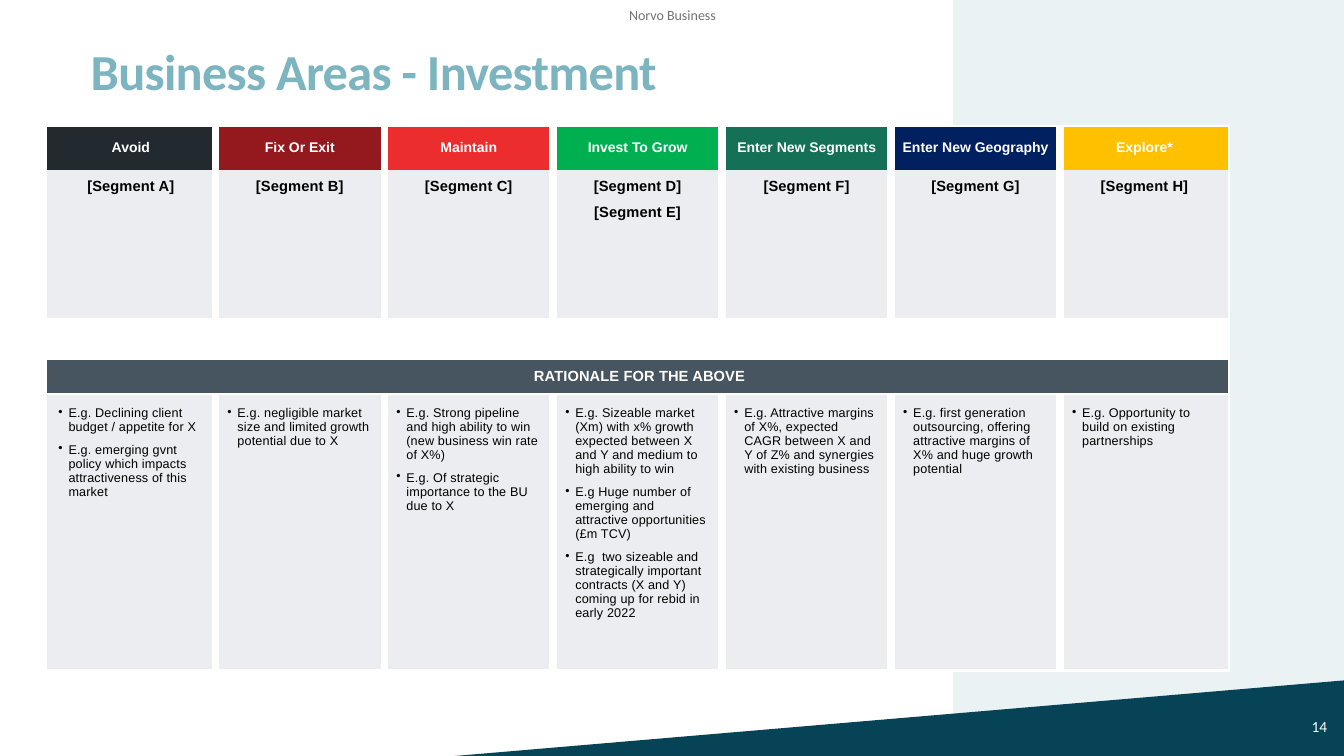
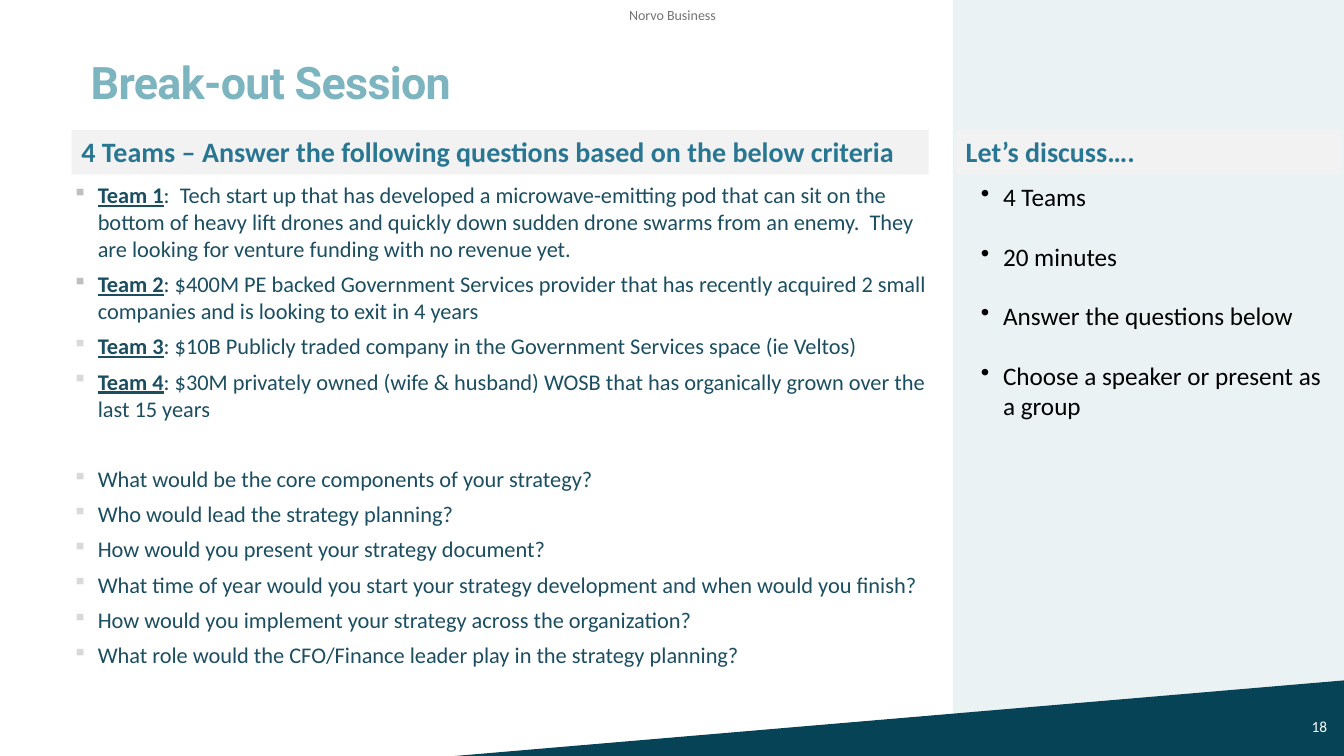
from lxml.etree import SubElement
from pptx import Presentation
from pptx.dml.color import RGBColor
from pptx.enum.shapes import MSO_SHAPE
from pptx.enum.text import MSO_ANCHOR, MSO_AUTO_SIZE, PP_ALIGN
from pptx.oxml.ns import qn
from pptx.util import Inches, Pt

WHITE = RGBColor(0xFF, 0xFF, 0xFF)
BLACK = RGBColor(0x00, 0x00, 0x00)
GREY = RGBColor(0x73, 0x73, 0x73)
PANEL = RGBColor(0xD7, 0xE6, 0xEB)
WEDGE = RGBColor(0x07, 0x43, 0x56)
TITLE = RGBColor(0x7C, 0xB4, 0xC0)
HEADING = RGBColor(0x28, 0x76, 0x92)
HEADING_BAND = RGBColor(0xF2, 0xF2, 0xF2)
BODY = RGBColor(0x1B, 0x4E, 0x61)
BULLET = RGBColor(0xBF, 0xBF, 0xBF)
BULLET_LIGHT = RGBColor(0xD9, 0xD9, 0xD9)
CELL = RGBColor(0xEB, 0xED, 0xF0)
RATIONALE = RGBColor(0x46, 0x55, 0x5F)

AREAS = [
    ("Avoid", RGBColor(0x23, 0x2A, 0x2F), ["[Segment A]"],
     ["E.g. Declining client budget / appetite for X",
      "E.g. emerging gvnt policy which impacts attractiveness of this market"]),
    ("Fix Or Exit", RGBColor(0x94, 0x19, 0x1F), ["[Segment B]"],
     ["E.g. negligible market size and limited growth potential due to X"]),
    ("Maintain", RGBColor(0xEB, 0x2D, 0x2E), ["[Segment C]"],
     ["E.g. Strong pipeline and high ability to win (new business win rate of X%)",
      "E.g. Of strategic importance to the BU due to X"]),
    ("Invest To Grow", RGBColor(0x00, 0xB0, 0x50), ["[Segment D]", "[Segment E]"],
     ["E.g. Sizeable market (Xm) with x% growth expected between X and Y and medium to high "
      "ability to win",
      "E.g Huge number of emerging and attractive opportunities (£m TCV)",
      "E.g  two sizeable and strategically important contracts (X and Y) coming up for rebid "
      "in early 2022"]),
    ("Enter New Segments", RGBColor(0x14, 0x70, 0x56), ["[Segment F]"],
     ["E.g. Attractive margins of X%, expected CAGR between X and Y of Z% and synergies with "
      "existing business"]),
    ("Enter New Geography", RGBColor(0x00, 0x20, 0x60), ["[Segment G]"],
     ["E.g. first generation outsourcing, offering attractive margins of X% and huge growth "
      "potential"]),
    ("Explore*", RGBColor(0xFF, 0xC0, 0x00), ["[Segment H]"],
     ["E.g. Opportunity to build on existing partnerships"]),
]
ROW_HEIGHTS = [0.44, 0.26, 0.43, 0.26, 0.26, 0.26, 0.41, 0.34, 2.74]
TABLE_WIDTH = 11.73
SPACER_ROW, RATIONALE_ROW, REASONS_ROW = 6, 7, 8
TOP_BORDERS = {0: 2.25, RATIONALE_ROW: 1, REASONS_ROW: 1}
BOTTOM_BORDERS = {SPACER_ROW: 1, RATIONALE_ROW: 1, REASONS_ROW: 2.25}

TEAMS = [
    ("Team 1", ":  Tech start up that has developed a microwave-emitting pod that can sit on the "
     "bottom of heavy lift drones and quickly down sudden drone swarms from an enemy.  They are "
     "looking for venture funding with no revenue yet."),
    ("Team 2", ": $400M PE backed Government Services provider that has recently acquired 2 small "
     "companies and is looking to exit in 4 years"),
    ("Team 3", ": $10B Publicly traded company in the Government Services space (ie Veltos)"),
    ("Team 4", ": $30M privately owned (wife & husband) WOSB that has organically grown over the "
     "last 15 years"),
]
QUESTIONS = [
    "What would be the core components of your strategy?",
    "Who would lead the strategy planning?",
    "How would you present your strategy document?",
    "What time of year would you start your strategy development and when would you finish?",
    "How would you implement your strategy across the organization?",
    "What role would the CFO/Finance leader play in the strategy planning?",
]
DISCUSSION = ["4 Teams", "20 minutes", "Answer the questions below",
              "Choose a speaker or present as a group"]


def write(p, text, size, color, font="Calibri", bold=False, underline=False, spacing=0):
    """Append a formatted run to a paragraph."""
    r = p.add_run()
    r.text = text
    r.font.size = Pt(size)
    r.font.name = font
    r.font.bold = bold
    r.font.underline = underline
    r.font.color.rgb = color
    if spacing:
        r.font._element.set("spc", str(round(spacing * 100)))


def next_paragraph(tf, index):
    """Return the first paragraph of a frame or a new one after it."""
    return tf.add_paragraph() if index else tf.paragraphs[0]


def add_bullet(p, char, color, left, hang, percent=100):
    """Give a paragraph a bullet with a hanging indent."""
    pPr = p._p.get_or_add_pPr()
    pPr.set("marL", str(Inches(left)))
    pPr.set("indent", str(-Inches(hang)))
    SubElement(SubElement(pPr, qn("a:buClr")), qn("a:srgbClr"), val=str(color))
    SubElement(pPr, qn("a:buSzPct"), val=str(percent * 1000))
    SubElement(pPr, qn("a:buChar"), char=char)


def set_margins(box, left, top, right, bottom):
    """Set the inner margins of a text frame or table cell."""
    box.margin_left, box.margin_top = Inches(left), Inches(top)
    box.margin_right, box.margin_bottom = Inches(right), Inches(bottom)


def add_box(s, left, top, width, height, margins=(0.1, 0.05, 0.1, 0.05)):
    """Add a wrapping text box and return its frame."""
    tf = s.shapes.add_textbox(Inches(left), Inches(top), Inches(width), Inches(height)).text_frame
    tf.word_wrap = True
    set_margins(tf, *margins)
    return tf


def add_block(s, kind, left, top, width, height, color):
    """Add a flat filled shape without outline."""
    sp = s.shapes.add_shape(kind, Inches(left), Inches(top), Inches(width), Inches(height))
    sp.shadow.inherit = False
    sp.fill.solid()
    sp.fill.fore_color.rgb = color
    sp.line.fill.background()
    return sp


def add_heading(s, left, width, text):
    """Add a pale band holding a section heading."""
    tf = add_block(s, MSO_SHAPE.RECTANGLE, left, 1.29, width, 0.44, HEADING_BAND).text_frame
    tf.word_wrap = True
    tf.vertical_anchor = MSO_ANCHOR.TOP
    tf.paragraphs[0].alignment = PP_ALIGN.LEFT
    write(tf.paragraphs[0], text, 20, HEADING, bold=True)


def add_slide(prs, title, number, place, size, font="Calibri"):
    """Add a slide with the shared panel, wedge, header, title and number."""
    s = prs.slides.add_slide(prs.slide_layouts[5])
    panel = add_block(s, MSO_SHAPE.RECTANGLE, 9.45, 0, 3.88, 7.5, PANEL)
    color = next(panel._element.spPr.iter(qn("a:srgbClr")))
    SubElement(color, qn("a:alpha"), val="50000")
    wedge = add_block(s, MSO_SHAPE.RIGHT_TRIANGLE, 4.51, 6.75, 8.82, 0.75, WEDGE)
    wedge._element.spPr.find(qn("a:xfrm")).set("flipH", "1")

    header = add_box(s, 6.1, 0, 1.14, 0.29, (0, 0, 0, 0))
    header.vertical_anchor = MSO_ANCHOR.MIDDLE
    header.paragraphs[0].alignment = PP_ALIGN.CENTER
    write(header.paragraphs[0], "Norvo Business", 10, GREY)

    sp = s.shapes.title
    sp.left, sp.top, sp.width, sp.height = [Inches(v) for v in place]
    tf = sp.text_frame
    tf.auto_size = MSO_AUTO_SIZE.NONE
    tf.vertical_anchor = MSO_ANCHOR.BOTTOM
    p = tf.paragraphs[0]
    p.alignment = PP_ALIGN.LEFT
    p.line_spacing = 0.85
    write(p, title, size, TITLE, font=font, bold=True, spacing=-0.5)

    footer = add_box(s, 12.91, 7.01, 0.42, 0.4)
    footer.vertical_anchor = MSO_ANCHOR.MIDDLE
    write(footer.paragraphs[0], number, 11, WHITE)
    return s


def style_cell(cell, color, borders):
    """Set the left, right, top and bottom white borders and the fill of a cell."""
    tcPr = cell._tc.get_or_add_tcPr()
    for side, width in zip("LRTB", borders):
        ln = SubElement(tcPr, qn("a:ln" + side), w=str(Pt(width)))
        if width:
            SubElement(SubElement(ln, qn("a:solidFill")), qn("a:srgbClr"), val=str(WHITE))
        else:
            SubElement(ln, qn("a:noFill"))
    cell.fill.solid()
    cell.fill.fore_color.rgb = color


def fill_label(cell, text, size, color):
    """Write a centred bold label in a cell."""
    p = cell.text_frame.paragraphs[0]
    p.alignment = PP_ALIGN.CENTER
    write(p, text, size, color, font="Arial", bold=True, spacing=0.1 if size > 10 else 0)


def fill_reasons(cell, reasons):
    """Write a bulleted list in a cell."""
    set_margins(cell, 0.12, 0.12, 0.12, 0.08)
    for i, reason in enumerate(reasons):
        p = next_paragraph(cell.text_frame, i)
        add_bullet(p, "•", BLACK, 0.1, 0.1)
        p.space_before = Pt(6 if i else 0)
        write(p, reason, 9, BLACK, font="Arial", spacing=0.1)


def style_table(table):
    """Set the sizes, fills and borders of the whole grid."""
    table.first_row = table.horz_banding = False
    last = len(AREAS) - 1
    for column in table.columns:
        column.width = Inches(TABLE_WIDTH / len(AREAS))
    for i, height in enumerate(ROW_HEIGHTS):
        table.rows[i].height = Inches(height)
        wide = i in (SPACER_ROW, RATIONALE_ROW)
        for j, area in enumerate(AREAS):
            color = {0: area[1], SPACER_ROW: WHITE, RATIONALE_ROW: RATIONALE}.get(i, CELL)
            style_cell(table.cell(i, j), color,
                       (1 if wide or j == 0 else 6, 1 if wide or j == last else 6,
                        TOP_BORDERS.get(i, 0), BOTTOM_BORDERS.get(i, 0)))
    for i in (SPACER_ROW, RATIONALE_ROW):
        table.cell(i, 0).merge(table.cell(i, last))


def add_investment_table(s):
    """Add the table of business areas, segments and reasons."""
    table = s.shapes.add_table(len(ROW_HEIGHTS), len(AREAS), Inches(0.46), Inches(1.25),
                               Inches(TABLE_WIDTH), Inches(sum(ROW_HEIGHTS))).table
    style_table(table)
    for j, (name, _, segments, reasons) in enumerate(AREAS):
        head = table.cell(0, j)
        head.vertical_anchor = MSO_ANCHOR.MIDDLE
        fill_label(head, name, 10, WHITE)
        for i, segment in enumerate(segments, 1):
            set_margins(table.cell(i, j), 0.1, 0.08, 0.1, 0)
            fill_label(table.cell(i, j), segment, 10.5, BLACK)
        fill_reasons(table.cell(REASONS_ROW, j), reasons)
    band = table.cell(RATIONALE_ROW, 0)
    set_margins(band, 0.08, 0.08, 0.04, 0.08)
    fill_label(band, "RATIONALE FOR THE ABOVE", 10.5, WHITE)
    for cell in table.iter_cells():
        if not cell.text:
            SubElement(cell.text_frame.paragraphs[0]._p, qn("a:endParaRPr"), sz="800")


def add_criteria(s):
    """Add the team descriptions followed by the questions."""
    tf = add_box(s, 0.72, 1.75, 8.5, 5.26, (0, 0.05, 0, 0.05))
    items = TEAMS + [("", question) for question in QUESTIONS]
    for i, (team, text) in enumerate(items):
        p = next_paragraph(tf, i)
        add_bullet(p, "▪", BULLET if i < 2 else BULLET_LIGHT, 0.25, 0.25, 90)
        p.space_after = Pt(31 if i == len(TEAMS) - 1 else 6)
        if team:
            write(p, team, 16, BODY, bold=True, underline=True)
        write(p, text, 16, BODY)


def add_discussion(s):
    """Add the widely spaced list in the side panel."""
    tf = add_box(s, 9.47, 1.75, 3.83, 4.89)
    for i, text in enumerate(DISCUSSION):
        p = next_paragraph(tf, i)
        add_bullet(p, "•", BLACK, 0.38, 0.22)
        p.space_before = Pt(21 if i else 0)
        write(p, text, 18, BLACK)


def main():
    """Build both slides and save the deck."""
    prs = Presentation()
    prs.slide_width, prs.slide_height = Inches(13.33), Inches(7.5)
    s = add_slide(prs, "Business Areas - Investment", "14", (0.8, 0.14, 11.73, 0.91), 36)
    add_investment_table(s)
    s = add_slide(prs, "Break-out Session", "18", (0.8, 0.26, 11.15, 0.87), 32, font="Roboto")
    add_criteria(s)
    add_discussion(s)
    add_heading(s, 0.71, 8.5,
                "4 Teams – Answer the following questions based on the below criteria")
    add_heading(s, 9.48, 3.83, "Let’s discuss….")
    prs.save("out.pptx")


if __name__ == "__main__":
    main()
